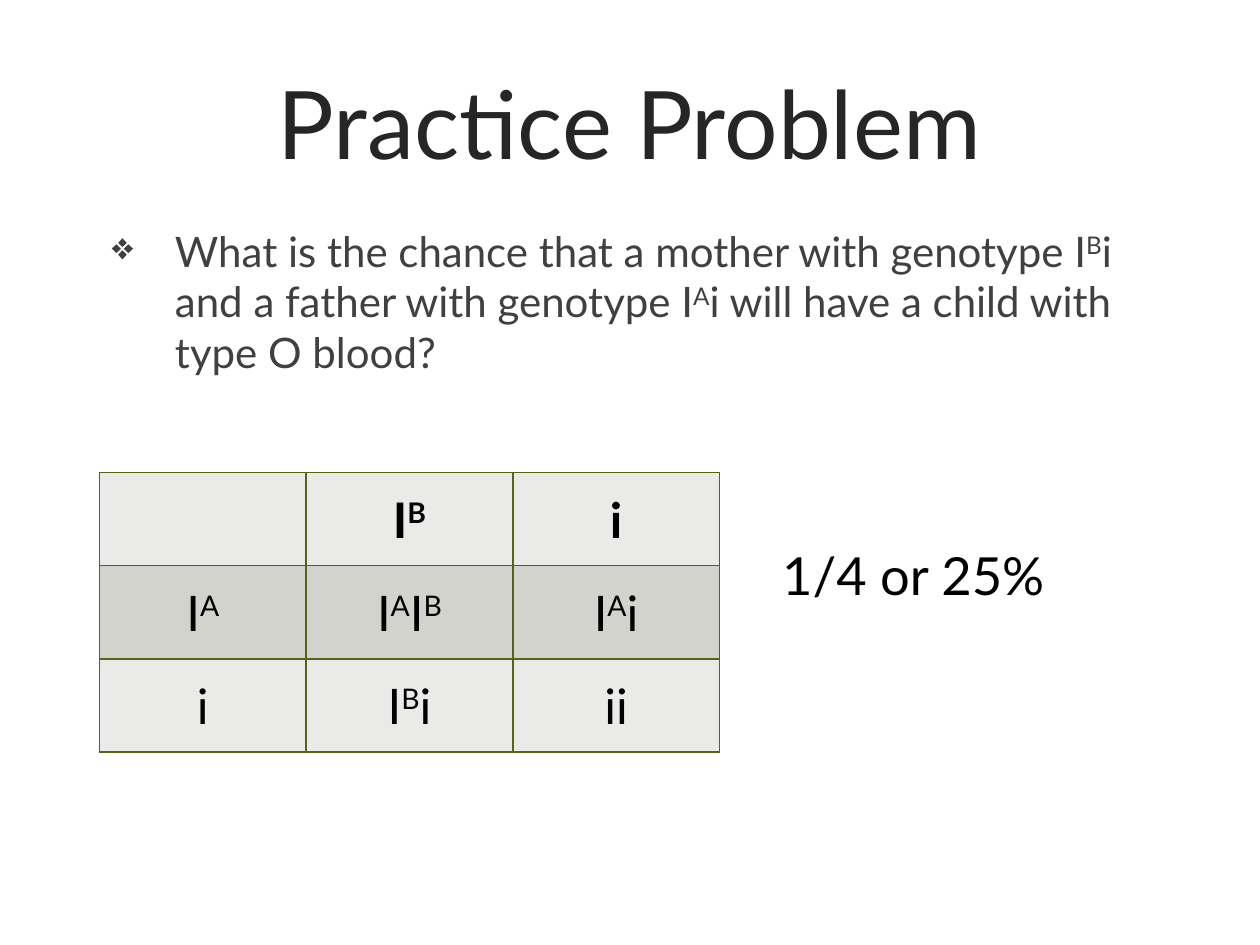
import lxml.etree
import pptx
import pptx.dml.color
import pptx.enum.text
import pptx.oxml.ns
import pptx.util
from pptx.util import Inches

COLORS = {
    "title": "262626", "question": "404040", "text": "000000",
    "border": "586215", "light": "EAEAE8", "dark": "D1D3CC",
}
FONT = "Lato"
ALIGN = pptx.enum.text.PP_ALIGN
ANCHOR = pptx.enum.text.MSO_ANCHOR
qn = pptx.oxml.ns.qn


def write(frame, text, size, color, align=ALIGN.LEFT, bold=False):
    """Fill the first paragraph; the letter after each ^ is superscript."""
    paragraph = frame.paragraphs[0]
    paragraph.alignment = align
    first, *rest = text.split("^")
    pieces = [(first, False)]
    for part in rest:
        pieces += [(part[0], True), (part[1:], False)]
    for piece, raised in pieces:
        if not piece:
            continue
        run = paragraph.add_run()
        run.text = piece
        style = {"name": FONT, "size": pptx.util.Pt(size), "bold": bold}
        for key, value in style.items():
            setattr(run.font, key, value)
        run.font.color.rgb = pptx.dml.color.RGBColor.from_string(COLORS[color])
        if raised:
            run.font._element.set("baseline", "30000")
    return paragraph


def add_text(left, top, width, height, anchor=ANCHOR.TOP):
    box = slide.shapes.add_textbox(
        Inches(left), Inches(top), Inches(width), Inches(height))
    frame = box.text_frame
    for key, value in {"word_wrap": True, "vertical_anchor": anchor}.items():
        setattr(frame, key, value)
    return frame


deck = pptx.Presentation()
deck.slide_width, deck.slide_height = Inches(10), Inches(7.5)
slide = deck.slides.add_slide(deck.slide_layouts[6])

# Title
title = add_text(0.79, 0.34, 8.41, 1.25, ANCHOR.MIDDLE)
write(title, "Practice Problem", 54, "title", ALIGN.CENTER)

# Question with a diamond bullet
question = write(
    add_text(0.79, 1.74, 8.41, 5),
    "What is the chance that a mother with genotype I^Bi and a father with "
    "genotype I^Ai will have a child with type O blood?", 24, "question")
question.space_before = pptx.util.Pt(24)
indent = question._p.get_or_add_pPr()
indent.set("marL", str(Inches(0.5)))
indent.set("indent", str(Inches(-0.5)))
lxml.etree.SubElement(indent, qn("a:buSzPct"), val="90000")
lxml.etree.SubElement(indent, qn("a:buChar"), char="❖")

# Punnett square
genotypes = [
    ["", "I^B", "i"],
    ["I^A", "I^AI^B", "I^Ai"],
    ["i", "I^Bi", "ii"],
]
punnett = slide.shapes.add_table(
    3, 3, Inches(0.79), Inches(3.75), Inches(4.91), Inches(2.22)).table
for column in punnett.columns:
    column.width = Inches(1.64)
for row_index, row in enumerate(genotypes):
    punnett.rows[row_index].height = Inches(0.74)
    shade = COLORS["dark" if row_index == 1 else "light"]
    for column_index, genotype in enumerate(row):
        cell = punnett.cell(row_index, column_index)
        cell.vertical_anchor = ANCHOR.MIDDLE
        write(cell.text_frame, genotype, 28, "text", ALIGN.CENTER,
              bold=row_index == 0)
        # Borders come before the fill in the cell properties
        properties = cell._tc.get_or_add_tcPr()
        for side in ("a:lnL", "a:lnR", "a:lnT", "a:lnB"):
            border = lxml.etree.SubElement(
                properties, qn(side), w=str(pptx.util.Pt(1)))
            line_fill = lxml.etree.SubElement(border, qn("a:solidFill"))
            lxml.etree.SubElement(
                line_fill, qn("a:srgbClr"), val=COLORS["border"])
        cell.fill.solid()
        cell.fill.fore_color.rgb = pptx.dml.color.RGBColor.from_string(shade)

# Answer
answer = add_text(6.11, 4.26, 3.09, 0.61)
answer.auto_size = pptx.enum.text.MSO_AUTO_SIZE.SHAPE_TO_FIT_TEXT
write(answer, "1/4 or 25%", 30, "text")

deck.save("out.pptx")
